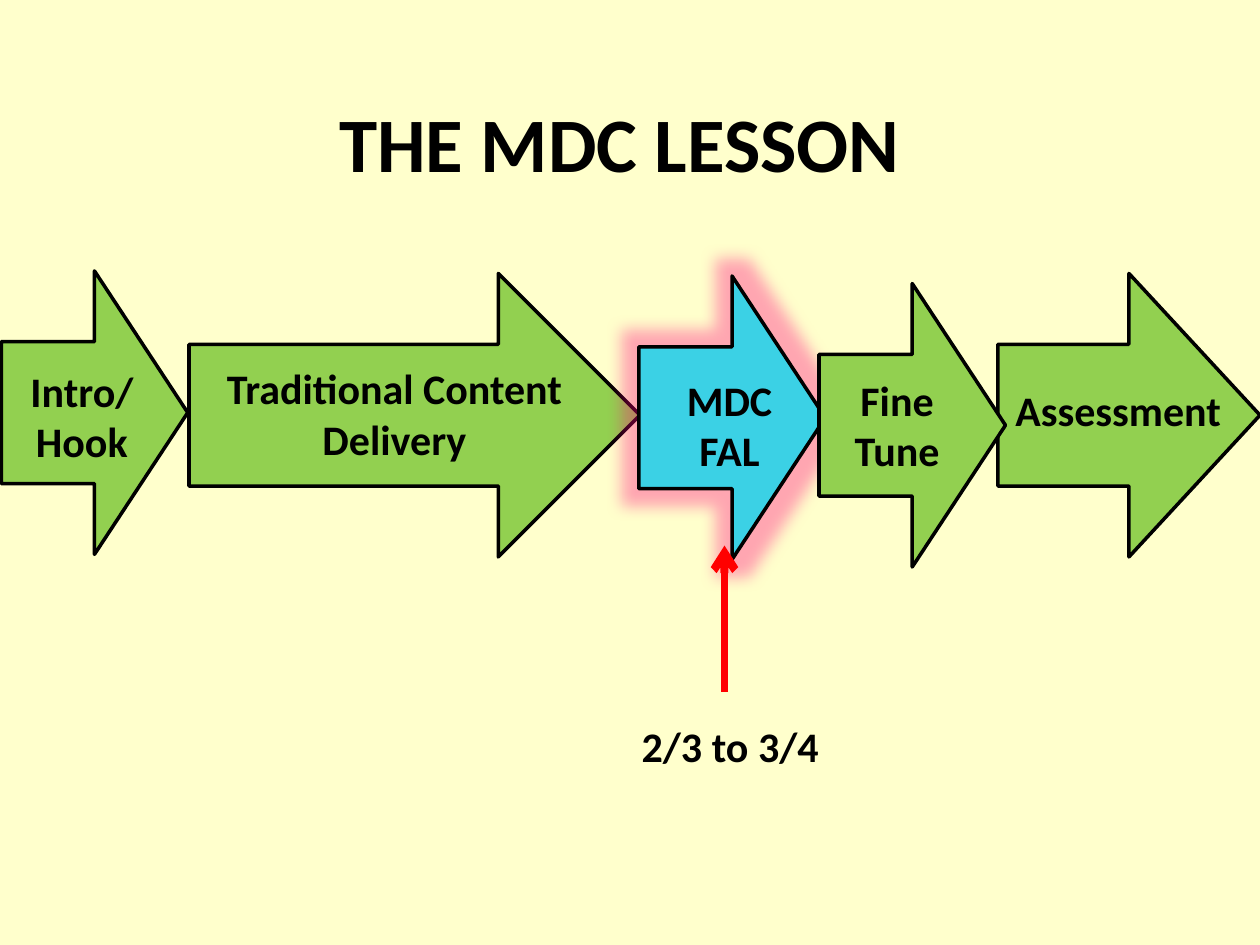
import pptx
import pptx.util
import pptx.dml.color
import pptx.enum.shapes
import pptx.enum.text
import pptx.oxml
import pptx.oxml.ns

Inches = pptx.util.Inches
Pt = pptx.util.Pt
RGBColor = pptx.dml.color.RGBColor

CREAM = RGBColor(0xFF, 0xFF, 0xCC)
GREEN = RGBColor(0x92, 0xD0, 0x50)
CYAN = RGBColor(0x3B, 0xD1, 0xE5)
BLACK = RGBColor(0, 0, 0)
RED = RGBColor(0xFF, 0, 0)
GLOW = RGBColor(0xFF, 0x00, 0x80)

ARROW_HEIGHT = 2.25
# Back to front: arrow (left, top, width), fill, label lines, label box
STAGES = [
    ((0.01, 2.15, 1.48), GREEN, ["Intro/", "Hook"], (0.03, 2.85, 1.24, 0.9)),
    ((1.5, 2.17, 3.58), GREEN, ["Traditional Content Delivery"], (1.42, 2.83, 3.42, 0.9)),
    ((7.92, 2.17, 2.08), GREEN, ["Assessment"], (7.75, 3, 2.25, 0.5)),
    ((5.07, 2.19, 1.48), CYAN, ["MDC", "FAL"], (5.17, 2.92, 1.24, 0.9)),
    ((6.5, 2.25, 1.48), GREEN, ["Fine", "Tune"], (6.5, 2.92, 1.24, 0.9)),
]


def add_xml(parent, tag, content="", **attributes):
    listed = "".join(f' {name}="{value}"' for name, value in attributes.items())
    namespace = pptx.oxml.ns.nsdecls("a")
    parent.append(pptx.oxml.parse_xml(f"<a:{tag} {namespace}{listed}>{content}</a:{tag}>"))


def add_label(slide, box, lines, size=24, anchor=pptx.enum.text.MSO_ANCHOR.TOP):
    frame = slide.shapes.add_textbox(*map(Inches, box)).text_frame
    frame.word_wrap = True
    frame.vertical_anchor = anchor
    frame.text = "\n".join(lines)
    for paragraph in frame.paragraphs:
        paragraph.alignment = pptx.enum.text.PP_ALIGN.CENTER
        paragraph.font.name = "Calibri"
        paragraph.font.size = Pt(size)
        paragraph.font.bold = True
        paragraph.font.color.rgb = BLACK


def add_glow(shape, color, radius, opacity):
    """Put a soft halo, with opacity in percent, around a shape."""
    effects = shape._element.spPr.find(pptx.oxml.ns.qn("a:effectLst"))
    tint = f'<a:srgbClr val="{color}"><a:alpha val="{opacity * 1000}"/></a:srgbClr>'
    add_xml(effects, "glow", tint, rad=int(radius))


def add_stage(slide, place, fill, lines, label_box):
    arrow = slide.shapes.add_shape(
        pptx.enum.shapes.MSO_SHAPE.RIGHT_ARROW, *map(Inches, (*place, ARROW_HEIGHT)))
    arrow.shadow.inherit = False
    arrow.fill.solid()
    arrow.fill.fore_color.rgb = fill
    arrow.line.color.rgb = BLACK
    arrow.line.width = Pt(2)
    if fill == CYAN:
        add_glow(arrow, GLOW, Pt(18), 35)
    add_label(slide, label_box, lines)


def add_pointer(slide, x, bottom, top):
    pointer = slide.shapes.add_connector(
        pptx.enum.shapes.MSO_CONNECTOR.STRAIGHT, *map(Inches, (x, bottom, x, top)))
    pointer.line.color.rgb = RED
    pointer.line.width = Pt(4.5)
    add_xml(pointer.line._get_or_add_ln(), "tailEnd", type="arrow")
    add_xml(pointer._element.spPr, "effectLst")


def main():
    presentation = pptx.Presentation()
    presentation.slide_width = Inches(10)
    presentation.slide_height = Inches(7.5)
    slide = presentation.slides.add_slide(presentation.slide_layouts[6])
    slide.background.fill.solid()
    slide.background.fill.fore_color.rgb = CREAM

    add_label(slide, (0.67, 0.5, 8.5, 1.25), ["THE MDC LESSON"], 44,
              pptx.enum.text.MSO_ANCHOR.MIDDLE)
    for stage in STAGES:
        add_stage(slide, *stage)
    add_label(slide, (4.67, 5.67, 2.25, 0.9), ["2/3 to 3/4"])
    add_pointer(slide, 5.75, 5.49, 4.33)
    presentation.save("out.pptx")


if __name__ == "__main__":
    main()
